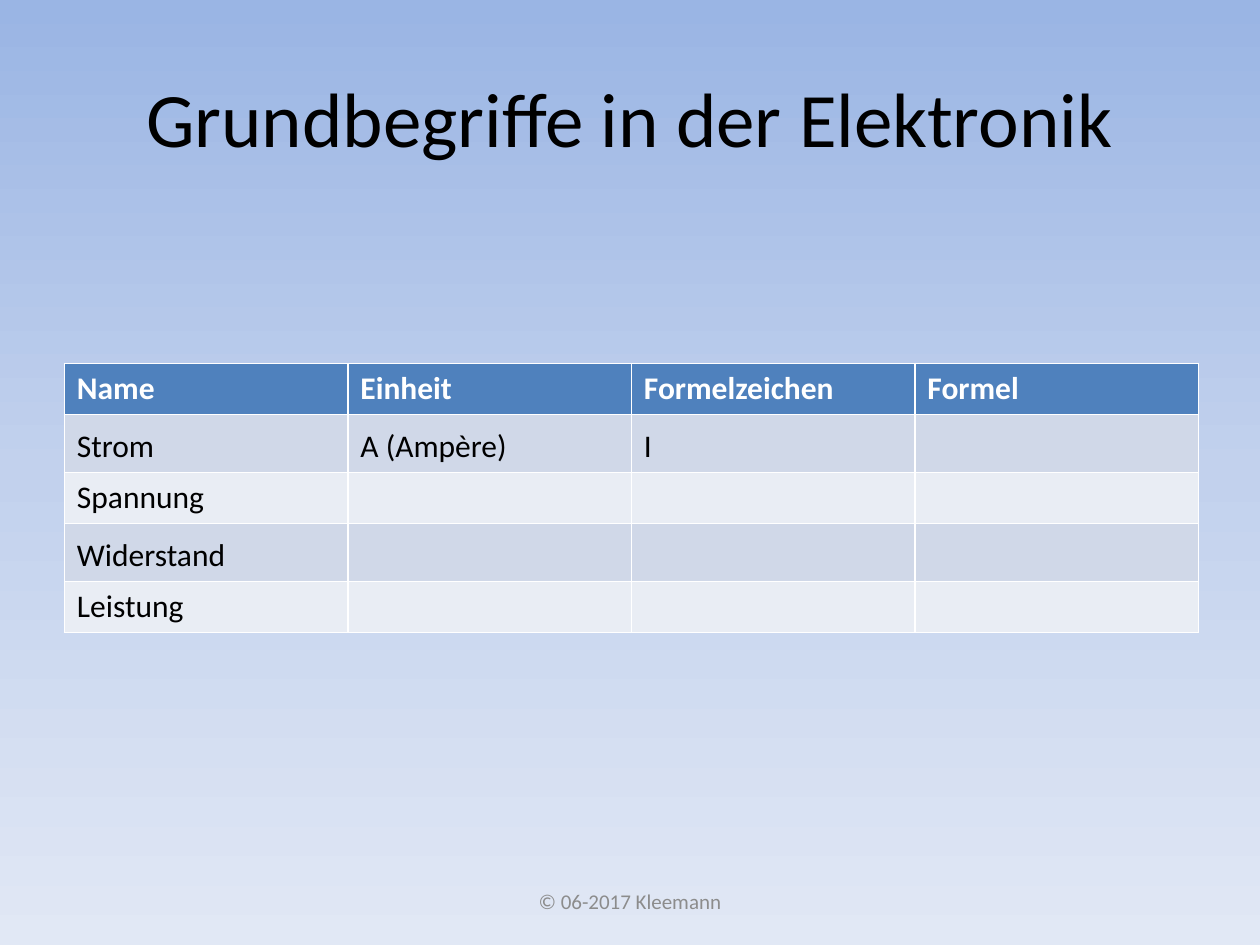
import copy

import pptx
import pptx.dml.color
import pptx.enum.text
import pptx.oxml.ns
import pptx.util

Pt = pptx.util.Pt
RGB = pptx.dml.color.RGBColor
ALIGN = pptx.enum.text.PP_ALIGN
MIDDLE = pptx.enum.text.MSO_ANCHOR.MIDDLE

TITLE = "Grundbegriffe in der Elektronik"
FOOTER = "© 06-2017 Kleemann"
ROWS = [
    ("Name", "Einheit", "Formelzeichen", "Formel"),
    ("Strom", "A (Ampère)", "I", ""),
    ("Spannung", "", "", ""),
    ("Widerstand", "", "", ""),
    ("Leistung", "", "", ""),
]

FONT = "Calibri"
BLACK = RGB(0x00, 0x00, 0x00)
WHITE = RGB(0xFF, 0xFF, 0xFF)
GRAY = RGB(0x8C, 0x8C, 0x8C)
BLUE = RGB(0x4F, 0x81, 0xBD)
DARK = RGB(0xD0, 0xD8, 0xE8)
LIGHT = RGB(0xE9, 0xED, 0xF4)
SKY = [
    (0, RGB(0x9A, 0xB5, 0xE4)),
    (0.5, RGB(0xC2, 0xD1, 0xED)),
    (1, RGB(0xE1, 0xE8, 0xF5)),
]

TABLE = (36.8, 207.6, 648)  # left, top, width
LOW, HIGH = 29.2, 33.1  # row heights
PAD = 3.6


def style(para, size, color, bold=False, align=None):
    font = para.font
    font.name, font.size, font.bold = FONT, Pt(size), bold
    font.color.rgb = color
    para.alignment = align


def place(shape, *box):
    shape.left, shape.top, shape.width, shape.height = map(Pt, box)


def paint(slide):
    """Fill the background with the gradient, top to bottom."""
    fill = slide.background.fill
    fill.gradient()
    fill.gradient_angle = 270
    stops = slide.element.find(".//" + pptx.oxml.ns.qn("a:gsLst"))
    stops.insert(1, copy.deepcopy(stops[0]))
    for stop, (pos, color) in zip(fill.gradient_stops, SKY):
        stop.position = pos
        stop.color.rgb = color


def add_grid(slide):
    left, top, width = TABLE
    count = len(ROWS[0])
    frame = slide.shapes.add_table(
        len(ROWS), count, Pt(left), Pt(top), Pt(width), Pt(LOW * len(ROWS)))
    grid = frame.table
    for col in grid.columns:
        col.width = Pt(width / count)
    for i, row in enumerate(ROWS):
        odd = i % 2 == 1
        head = i == 0
        grid.rows[i].height = Pt(HIGH if odd else LOW)
        for j, text in enumerate(row):
            cell = grid.cell(i, j)
            cell.text = text
            cell.margin_top = Pt(PAD + HIGH - LOW if odd else PAD)
            cell.fill.solid()
            cell.fill.fore_color.rgb = BLUE if head else DARK if odd else LIGHT
            style(cell.text_frame.paragraphs[0], 18,
                  WHITE if head else BLACK, head)


def main():
    deck = pptx.Presentation()
    deck.slide_width, deck.slide_height = Pt(720), Pt(540)
    slide = deck.slides.add_slide(deck.slide_layouts[5])
    paint(slide)

    title = slide.shapes.title
    place(title, 36, 21.6, 648, 90)
    title.text_frame.text = TITLE
    title.text_frame.vertical_anchor = MIDDLE
    style(title.text_frame.paragraphs[0], 44, BLACK, align=ALIGN.CENTER)

    add_grid(slide)

    foot = slide.shapes.add_textbox(Pt(246), Pt(500.5), Pt(228), Pt(28.75))
    foot.text_frame.word_wrap = True
    foot.text_frame.vertical_anchor = MIDDLE
    foot.text_frame.text = FOOTER
    style(foot.text_frame.paragraphs[0], 12, GRAY, align=ALIGN.CENTER)

    deck.save("out.pptx")


if __name__ == "__main__":
    main()
